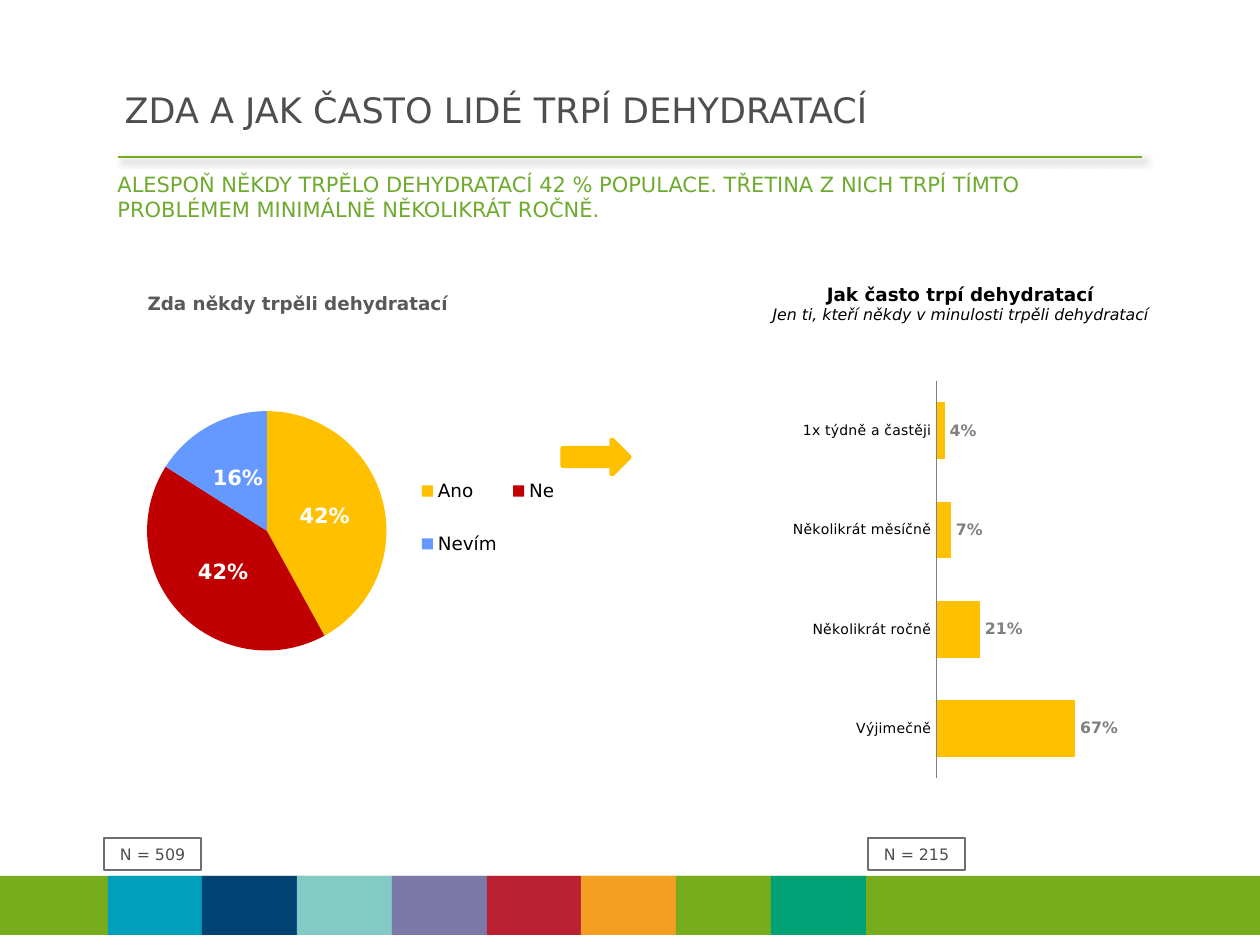
"""Build the slide on how many people suffer dehydration and how often."""
from lxml.etree import SubElement
from pptx import Presentation
from pptx.chart.data import CategoryChartData
from pptx.dml.color import RGBColor
from pptx.enum.chart import XL_CHART_TYPE, XL_LABEL_POSITION, XL_LEGEND_POSITION, XL_TICK_MARK
from pptx.enum.shapes import MSO_CONNECTOR, MSO_SHAPE
from pptx.enum.text import MSO_ANCHOR, PP_ALIGN
from pptx.oxml import parse_xml
from pptx.oxml.ns import qn
from pptx.util import Emu, Pt

TITLE = "ZDA A JAK ČASTO LIDÉ TRPÍ DEHYDRATACÍ"
LEAD = ("ALESPOŇ NĚKDY TRPĚLO DEHYDRATACÍ 42 % POPULACE. TŘETINA Z NICH TRPÍ TÍMTO "
        "PROBLÉMEM MINIMÁLNĚ NĚKOLIKRÁT ROČNĚ.")
EVER = {"Ano": 0.42, "Ne": 0.42, "Nevím": 0.16}
OFTEN = {"1x týdně a častěji": 0.04, "Několikrát měsíčně": 0.07,
         "Několikrát ročně": 0.21, "Výjimečně": 0.67}
EVER_HEAD = ["Zda někdy trpěli dehydratací"]
OFTEN_HEAD = ["Jak často trpí dehydratací",
              "Jen ti, kteří někdy v minulosti trpěli dehydratací"]
BASES = [("N = 509", 104), ("N = 215", 868)]
BAND = ["009FBB", "004272", "83C9C6", "7C78A8", "B92032", "F49F22", "77AD1C", "00A275"]
THEME = {
    "face": "DejaVu Sans",
    "ink": "4E4E4E", "lead": "6EAA2E", "green": "77AD1C", "gold": "FFC000",
    "black": "000000", "white": "FFFFFF", "gray": "808080", "head": "595959", "edge": "6E6E6E",
    "pie": ["FFC000", "C00000", "6699FF"],
    "title_size": 20, "lead_size": 12, "head_size": 10.5, "note_size": 9, "axis_size": 8,
}
SCALE = 914400 / 126


def px(*vals):
    """Turn pixel lengths into EMU."""
    return [Emu(round(val * SCALE)) for val in vals]


def tint(name):
    """Give the colour for a theme name or a hex value."""
    return RGBColor.from_string(THEME.get(name, name))


def style(font, size, color, **more):
    """Set the face, size, colour and further font values."""
    for key, val in {"name": THEME["face"], "size": Pt(size), **more}.items():
        setattr(font, key, val)
    font.color.rgb = tint(color)


def block(slide, kind, box, fill=None, edge=None, width=0.75):
    """Add a flat preset shape."""
    shape = slide.shapes.add_shape(kind, *px(*box))
    shape.shadow.inherit = False
    if fill:
        shape.fill.solid()
        shape.fill.fore_color.rgb = tint(fill)
    else:
        shape.fill.background()
    if edge:
        shape.line.color.rgb = tint(edge)
        shape.line.width = Pt(width)
    else:
        shape.line.fill.background()
    return shape


def place(node, index, inner=False, **spots):
    """Give a chart part a manual layout."""
    for old in node.findall(qn("c:layout")):
        node.remove(old)
    root = parse_xml('<c:layout xmlns:c="http://schemas.openxmlformats.org/'
                     'drawingml/2006/chart"><c:manualLayout/></c:layout>')
    items = {"layoutTarget": "inner"} if inner else {}
    items.update({"xMode": "edge", "yMode": "edge"}, **spots)
    for tag, val in items.items():
        SubElement(root[0], qn(f"c:{tag}")).set("val", str(val))
    node.insert(index, root)


def graph(slide, kind, data, box, plot, head, spot, color):
    """Add a chart with its title and plot area in place."""
    feed = CategoryChartData(number_format="0%")
    feed.categories = list(data)
    feed.add_series("Series 1", list(data.values()))
    chart = slide.shapes.add_chart(kind, *px(*box), feed).chart
    style(chart.font, 18, "black")
    frame = chart.chart_title.text_frame
    frame.text = "\n".join(head)
    for i, par in enumerate(frame.paragraphs):
        size = THEME["note_size" if i else "head_size"]
        style(par.runs[0].font, size, color, bold=not i, italic=bool(i))
    place(chart.chart_title._element, 1, x=spot[0], y=spot[1])
    area = chart._chartSpace.chart.plotArea
    place(area, 0, True, **dict(zip("xywh", plot)))
    chart.plots[0].vary_by_categories = kind == XL_CHART_TYPE.PIE
    return chart


def labels(plot, size, color, spot):
    """Show bold percent values on a plot."""
    plot.has_data_labels = True
    tags = plot.data_labels
    form = {"show_value": True, "show_percentage": False, "number_format": "0%",
            "number_format_is_linked": False, "position": spot}
    for key, val in form.items():
        setattr(tags, key, val)
    style(tags.font, size, color, bold=True)


def pie(slide):
    """Add the pie of those who ever suffered."""
    chart = graph(slide, XL_CHART_TYPE.PIE, EVER, (35, 275, 546, 445),
                  (0.205, 0.306, 0.439, 0.538), EVER_HEAD, (0.2, 0.03), "head")
    plot = chart.plots[0]
    for i, color in enumerate(THEME["pie"]):
        fill = plot.series[0].points[i].format.fill
        fill.solid()
        fill.fore_color.rgb = tint(color)
    labels(plot, THEME["lead_size"], "white", XL_LABEL_POSITION.CENTER)
    chart.has_legend = True
    legend = chart.legend
    legend.position = XL_LEGEND_POSITION.LEFT
    legend.include_in_layout = False
    style(legend.font, THEME["head_size"], "black")
    place(legend._element, 1, x=0.69, y=0.39, w=0.28, h=0.31)


def bars(slide):
    """Add the bars of how often they suffer."""
    chart = graph(slide, XL_CHART_TYPE.BAR_CLUSTERED, OFTEN, (699, 273, 498, 547),
                  (0.477, 0.198, 0.416, 0.726), OFTEN_HEAD, (0.14, 0.01), "black")
    chart.has_legend = False
    plot = chart.plots[0]
    plot.gap_width = 75
    fill = plot.series[0].format.fill
    fill.solid()
    fill.fore_color.rgb = tint("gold")
    labels(plot, THEME["note_size"], "gray", XL_LABEL_POSITION.OUTSIDE_END)
    cats, vals = chart.category_axis, chart.value_axis
    for axis, form in (
        (cats, {"reverse_order": True, "major_tick_mark": XL_TICK_MARK.NONE,
                "has_major_gridlines": False}),
        (vals, {"minimum_scale": 0, "maximum_scale": 1, "visible": False,
                "has_major_gridlines": False}),
    ):
        for key, val in form.items():
            setattr(axis, key, val)
    style(cats.tick_labels.font, THEME["axis_size"], "black")
    cats.format.line.color.rgb = tint("gray")
    cats.format.line.width = Pt(1)


def rule(slide):
    """Draw the shadowed line under the title."""
    line = slide.shapes.add_connector(MSO_CONNECTOR.STRAIGHT, *px(118, 157, 1142, 157))
    line.line.color.rgb = tint("green")
    line.line.width = Pt(0.75)
    glow = SubElement(line._element.spPr, qn("a:effectLst"))
    cast = SubElement(glow, qn("a:outerShdw"), blurRad=str(Pt(4)), dist=str(Pt(3)),
                      dir="2700000", rotWithShape="0")
    hue = SubElement(cast, qn("a:srgbClr"), val=THEME["black"])
    SubElement(hue, qn("a:alpha"), val="40000")


def words(shape, text, size, color, align):
    """Fill a shape with one styled paragraph."""
    frame = shape.text_frame
    frame.word_wrap = True
    frame.text = text
    par = frame.paragraphs[0]
    par.alignment = align
    style(par.runs[0].font, size, color)
    return frame


def main():
    """Lay out and save the slide."""
    deck = Presentation()
    deck.slide_width, deck.slide_height = px(1260, 945)
    slide = deck.slides.add_slide(deck.slide_layouts[5])
    title = slide.shapes.title
    for key, val in zip(("left", "top", "width", "height"), px(112, 78, 1118, 64)):
        setattr(title, key, val)
    frame = words(title, TITLE, THEME["title_size"], "ink", PP_ALIGN.LEFT)
    frame.vertical_anchor = MSO_ANCHOR.MIDDLE
    rule(slide)
    block(slide, MSO_SHAPE.RECTANGLE, (0, 876, 1260, 59), "green")
    edges = [108 + i * 758 // len(BAND) for i in range(len(BAND) + 1)]
    for color, left, right in zip(BAND, edges, edges[1:]):
        block(slide, MSO_SHAPE.RECTANGLE, (left, 876, right - left, 59), color)
    lead = slide.shapes.add_textbox(*px(105, 165, 1052, 101))
    words(lead, LEAD, THEME["lead_size"], "lead", PP_ALIGN.LEFT)
    bars(slide)
    pie(slide)
    block(slide, MSO_SHAPE.RIGHT_ARROW, (563, 440, 66, 34), "gold", "gold", 3)
    for text, left in BASES:
        note = block(slide, MSO_SHAPE.RECTANGLE, (left, 838, 97, 32), edge="edge")
        words(note, text, THEME["note_size"], "ink", PP_ALIGN.CENTER)
    deck.save("out.pptx")


if __name__ == "__main__":
    main()
